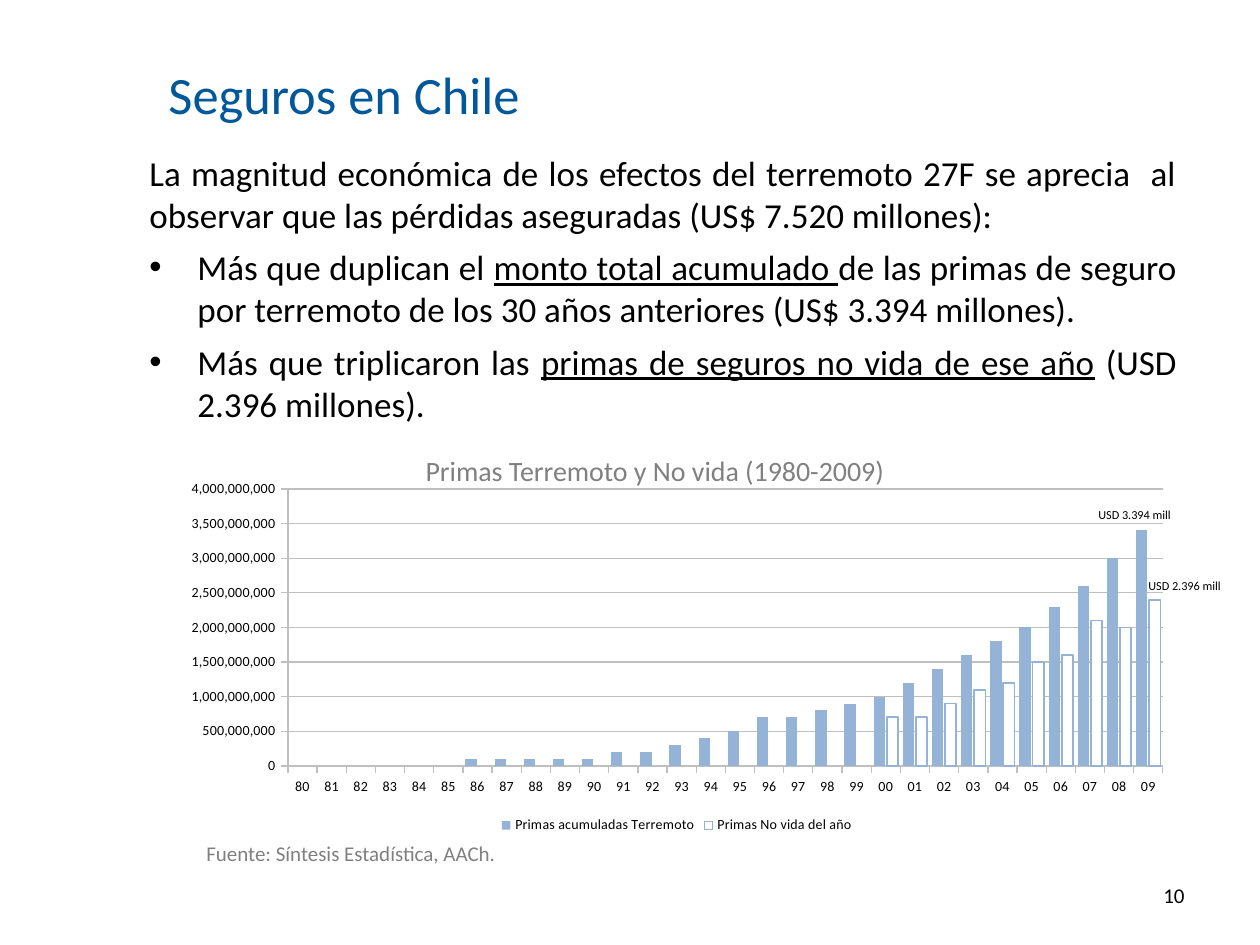
from dataclasses import dataclass

from lxml import etree
from pptx import Presentation
from pptx import util as u
from pptx.chart import data as chart_data
from pptx.dml.color import RGBColor
from pptx.enum import chart as charts, text
from pptx.oxml import ns

EMU_PER_PX = 914400 / 126


@dataclass(frozen=True)
class Theme:
    font: str = "Calibri"
    title: str = "00589A"
    ink: str = "000000"
    muted: str = "808080"
    bar: str = "95B3D7"
    paper: str = "FFFFFF"
    grid: str = "BFBFBF"
    title_size: int = 30
    body_size: int = 20
    heading_size: int = 16
    note_size: int = 12
    chart_size: int = 8
    label_size: int = 7


THEME = Theme()

BODY = [
    (False, ["La magnitud económica de los efectos del terremoto 27F se aprecia  al "
             "observar que las pérdidas aseguradas (US$ 7.520 millones):"]),
    (True, ["Más que duplican el ", "monto total acumulado ",
            "de las primas de seguro por terremoto de los 30 años anteriores "
            "(US$ 3.394 millones)."]),
    (True, ["Más que triplicaron las ", "primas de seguros no vida de ese año",
            " (USD 2.396 millones)."]),
]

YEARS = [f"{year % 100:02d}" for year in range(1980, 2010)]
HUNDRED_MILLION = 100_000_000
EARTHQUAKE = [0, 0, 0, 0, 0, 0, 1, 1, 1, 1,
              1, 2, 2, 3, 4, 5, 7, 7, 8, 9,
              10, 12, 14, 16, 18, 20, 23, 26, 30, 34]
NON_LIFE = [None] * 20 + [7, 7, 9, 11, 12, 15, 16, 21, 20, 24]


def px(length):
    return u.Emu(round(length * EMU_PER_PX))


def style(font, size, color):
    font.name = THEME.font
    font.size = u.Pt(size)
    font.color.rgb = RGBColor.from_string(color)


def add_box(page, left, top, width, height):
    box = page.shapes.add_textbox(px(left), px(top), px(width), px(height))
    box.text_frame.word_wrap = True
    return box.text_frame


def add_label(page, place, words, size, color, align=text.PP_ALIGN.LEFT):
    frame = add_box(page, *place)
    frame.text = words
    para = frame.paragraphs[0]
    para.alignment = align
    style(para.runs[0].font, size, color)


def add_bullet(para, indent):
    props = para._p.get_or_add_pPr()
    props.set("marL", str(px(indent)))
    props.set("indent", str(px(-indent)))
    etree.SubElement(props, ns.qn("a:buFont"), typeface="Arial")
    etree.SubElement(props, ns.qn("a:buChar"), char="•")


def add_body(page, place):
    frame = add_box(page, *place)
    for index, (bulleted, spans) in enumerate(BODY):
        para = frame.add_paragraph() if index else frame.paragraphs[0]
        if bulleted:
            add_bullet(para, 48)
        para.alignment = text.PP_ALIGN.JUSTIFY
        para.space_after = u.Pt(6)
        for position, words in enumerate(spans):
            span = para.add_run()
            span.text = words
            style(span.font, THEME.body_size, THEME.ink)
            span.font.underline = position == 1


def style_line(line, width, color):
    line.width = u.Pt(width)
    line.color.rgb = RGBColor.from_string(color)


def set_plot_area(chart, place, plot):
    area = chart._chartSpace.chart.plotArea
    layout = area.find(ns.qn("c:layout"))
    if layout is None:
        layout = etree.Element(ns.qn("c:layout"))
        area.insert(0, layout)
    manual = etree.SubElement(layout, ns.qn("c:manualLayout"))
    left, top, width, height = place
    settings = {
        "layoutTarget": "inner", "xMode": "edge", "yMode": "edge",
        "x": (plot[0] - left) / width, "y": (plot[1] - top) / height,
        "w": plot[2] / width, "h": plot[3] / height,
    }
    for name, value in settings.items():
        etree.SubElement(manual, ns.qn(f"c:{name}"), val=str(value))


def add_premium_chart(page, place, plot):
    data = chart_data.CategoryChartData(number_format="#,##0")
    data.categories = YEARS
    for name, values in (("Primas acumuladas Terremoto", EARTHQUAKE),
                         ("Primas No vida del año", NON_LIFE)):
        data.add_series(name, [v and v * HUNDRED_MILLION for v in values])
    chart = page.shapes.add_chart(
        charts.XL_CHART_TYPE.COLUMN_CLUSTERED, *map(px, place), data).chart
    style(chart.font, THEME.chart_size, THEME.ink)
    chart.has_title = False
    chart.has_legend = True
    chart.legend.position = charts.XL_LEGEND_POSITION.BOTTOM
    chart.legend.include_in_layout = False

    for axis in (chart.category_axis, chart.value_axis):
        axis.major_tick_mark = charts.XL_TICK_MARK.OUTSIDE
        style_line(axis.format.line, 0.75, THEME.grid)
    value_axis = chart.value_axis
    value_axis.minimum_scale = 0
    value_axis.maximum_scale = 40 * HUNDRED_MILLION
    value_axis.major_unit = 5 * HUNDRED_MILLION
    value_axis.has_major_gridlines = True
    style_line(value_axis.major_gridlines.format.line, 0.75, THEME.grid)
    value_axis.tick_labels.number_format = "#,##0"
    value_axis.tick_labels.number_format_is_linked = False

    bars = chart.plots[0]
    bars.vary_by_categories = False
    bars.gap_width = 43
    bars.overlap = -16
    for series, color in zip(bars.series, (THEME.bar, THEME.paper)):
        series.invert_if_negative = False
        series.format.fill.solid()
        series.format.fill.fore_color.rgb = RGBColor.from_string(color)
    style_line(bars.series[1].format.line, 1, THEME.bar)
    set_plot_area(chart, place, plot)


def main():
    deck = Presentation()
    deck.slide_width, deck.slide_height = px(1260), px(945)
    page = deck.slides.add_slide(deck.slide_layouts[6])
    add_label(page, (156, 56, 1042, 60), "Seguros en Chile",
              THEME.title_size, THEME.title)
    add_body(page, (137, 145, 1052, 289))
    add_label(page, (903, 876, 294, 50), "10",
              THEME.note_size, THEME.ink, text.PP_ALIGN.RIGHT)
    add_label(page, (194, 834, 794, 55), "Fuente: Síntesis Estadística, AACh.",
              THEME.note_size, THEME.muted)
    add_label(page, (134, 447, 1042, 55), "Primas Terremoto y No vida (1980-2009)",
              THEME.heading_size, THEME.muted, text.PP_ALIGN.CENTER)
    add_premium_chart(page, (171, 472, 1012, 367), (288, 489, 875, 277))
    for left, top, words in ((1086, 501, "USD 3.394 mill"),
                             (1136, 572, "USD 2.396 mill")):
        add_label(page, (left, top, 117, 28), words, THEME.label_size, THEME.ink)
    deck.save("out.pptx")


if __name__ == "__main__":
    main()
